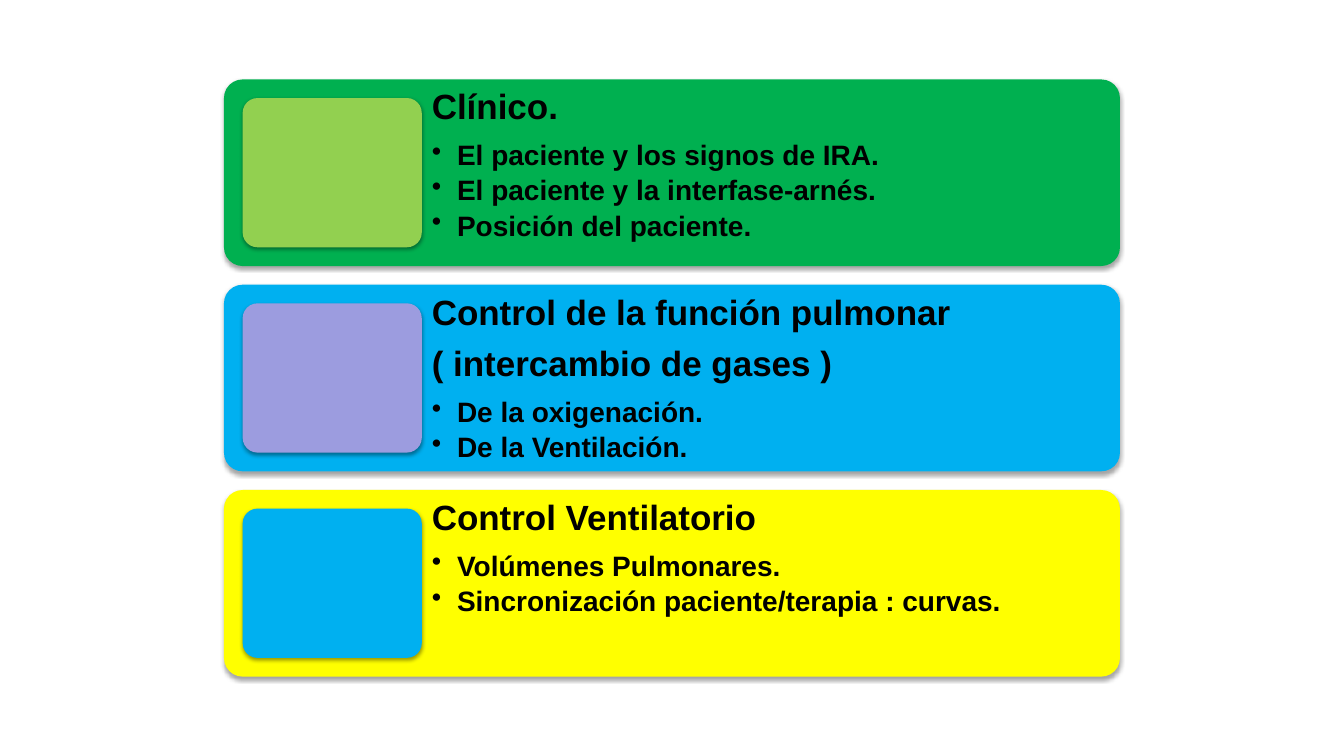
"""Builds a slide with three stacked cards on respiratory monitoring."""
from lxml import etree
from pptx import Presentation
from pptx import util as u
from pptx.dml.color import RGBColor
from pptx.enum import shapes, text
from pptx.oxml.ns import qn

GREEN = RGBColor(0x00, 0xB0, 0x50)
LIME = RGBColor(0x92, 0xD0, 0x50)
BLUE = RGBColor(0x00, 0xB0, 0xF0)
LILAC = RGBColor(0x9C, 0x9C, 0xDF)
YELLOW = RGBColor(0xFF, 0xFF, 0x00)
BLACK = RGBColor(0, 0, 0)

CARDS = [
    (GREEN, LIME, ["Clínico."],
     ["El paciente y los signos de IRA.",
      "El paciente y la interfase-arnés.",
      "Posición del paciente."]),
    (BLUE, LILAC, ["Control de la función pulmonar", "( intercambio de gases )"],
     ["De la oxigenación.", "De la Ventilación."]),
    (YELLOW, BLUE, ["Control Ventilatorio"],
     ["Volúmenes Pulmonares.", "Sincronización paciente/terapia : curvas."]),
]

SLIDE_WIDTH, SLIDE_HEIGHT = 13.33, 7.5
CARD_WIDTH = SLIDE_WIDTH * 2 / 3
CARD_LEFT = (SLIDE_WIDTH - CARD_WIDTH) / 2
STACK_HEIGHT = CARD_WIDTH * 2 / 3
GAP_SHARE = 0.1
CARD_HEIGHT = STACK_HEIGHT / (len(CARDS) + GAP_SHARE * (len(CARDS) - 1))
GAP = CARD_HEIGHT * GAP_SHARE
STACK_TOP = (SLIDE_HEIGHT - STACK_HEIGHT) / 2
TILE_WIDTH = CARD_WIDTH / 5
TEXT_OFFSET = GAP + TILE_WIDTH


def inches(*lengths):
    return [u.Inches(length) for length in lengths]


def add_panel(page, bounds, color, opacity, distance):
    panel = page.shapes.add_shape(
        shapes.MSO_SHAPE.ROUNDED_RECTANGLE, *inches(*bounds))
    panel.adjustments[0] = 0.1
    panel.fill.solid()
    panel.fill.fore_color.rgb = color
    panel.line.fill.background()
    panel.shadow.inherit = False
    effects = panel.element.spPr.find(qn("a:effectLst"))
    shadow = etree.SubElement(
        effects, qn("a:outerShdw"), blurRad=str(u.Pt(3.1)),
        dist=str(u.Pt(distance)), dir="5400000", rotWithShape="0")
    shade = etree.SubElement(shadow, qn("a:srgbClr"), val="000000")
    etree.SubElement(shade, qn("a:alpha"), val=str(opacity * 1000))


def add_text(page, bounds, headings, points):
    box = page.shapes.add_textbox(*inches(*bounds))
    frame = box.text_frame
    frame.word_wrap = True
    frame.vertical_anchor = text.MSO_ANCHOR.TOP
    frame.margin_left = frame.margin_right = u.Inches(0.1)
    frame.margin_top = frame.margin_bottom = u.Inches(0.1)
    lines = [(line, 0, 25, 10) for line in headings]
    lines += [(line, 1, 20, 3.6) for line in points]
    for index, (line, level, size, space) in enumerate(lines):
        para = frame.add_paragraph() if index else frame.paragraphs[0]
        para.level = level
        para.line_spacing = 0.9
        para.space_after = u.Pt(space)
        if level:
            properties = para._p.get_or_add_pPr()
            properties.set("marL", str(u.Inches(0.25)))
            properties.set("indent", str(-u.Inches(0.25)))
            etree.SubElement(properties, qn("a:buChar"), char="•")
        span = para.add_run()
        span.text = line
        span.font.name = "Arial"
        span.font.size = u.Pt(size)
        span.font.bold = True
        span.font.color.rgb = BLACK


def main():
    deck = Presentation()
    deck.slide_width, deck.slide_height = inches(SLIDE_WIDTH, SLIDE_HEIGHT)
    page = deck.slides.add_slide(deck.slide_layouts[6])
    for row, (card_color, tile_color, headings, points) in enumerate(CARDS):
        top = STACK_TOP + row * (CARD_HEIGHT + GAP)
        add_panel(page, (CARD_LEFT, top, CARD_WIDTH, CARD_HEIGHT),
                  card_color, 35, 1.8)
        add_text(page, (CARD_LEFT + TEXT_OFFSET, top,
                        CARD_WIDTH - TEXT_OFFSET, CARD_HEIGHT), headings, points)
        add_panel(page, (CARD_LEFT + GAP, top + GAP,
                         TILE_WIDTH, CARD_HEIGHT - 2 * GAP),
                  tile_color, 38, 1.6)
    deck.save("out.pptx")


if __name__ == "__main__":
    main()
